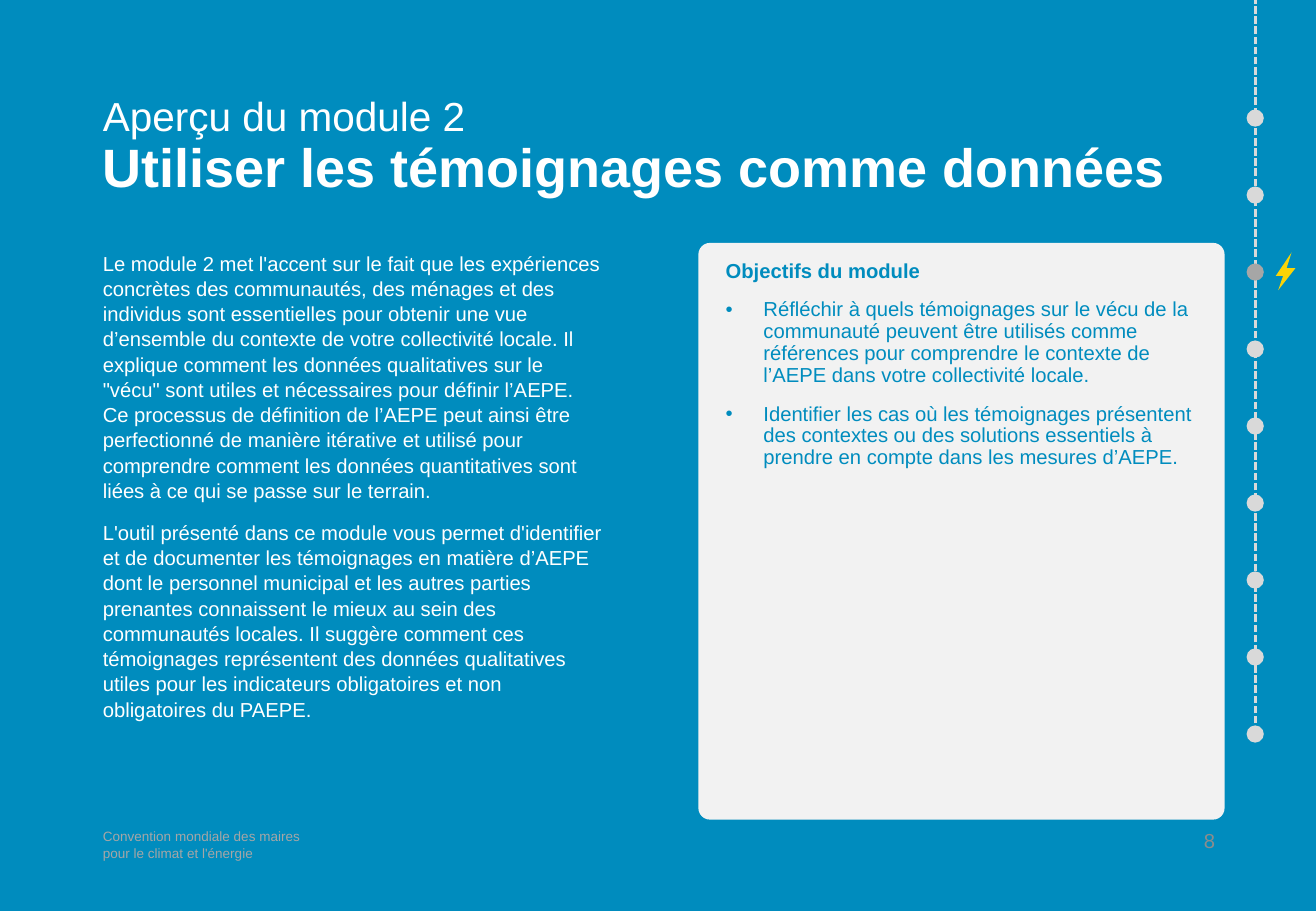
from pptx import Presentation
from pptx import util as u
from pptx.dml.color import RGBColor
from pptx.enum import dml, shapes, text
from pptx.oxml.ns import qn
from lxml import etree

BLUE, WHITE, CARD, DOT, GREY, NUMBER, BOLT = (
    "008CBE", "FFFFFF", "F2F2F2", "D9D9D9", "A6A6A6", "8C8C8C", "FAD307")

INTRO = [
    "Le module 2 met l'accent sur le fait que les expériences concrètes des communautés, des ménages "
    "et des individus sont essentielles pour obtenir une vue d’ensemble du contexte de votre "
    "collectivité locale. Il explique comment les données qualitatives sur le \"vécu\" sont utiles et "
    "nécessaires pour définir l’AEPE. Ce processus de définition de l’AEPE peut ainsi être "
    "perfectionné de manière itérative et utilisé pour comprendre comment les données quantitatives "
    "sont liées à ce qui se passe sur le terrain.",
    "L'outil présenté dans ce module vous permet d'identifier et de documenter les témoignages en "
    "matière d’AEPE dont le personnel municipal et les autres parties prenantes connaissent le mieux "
    "au sein des communautés locales. Il suggère comment ces témoignages représentent des données "
    "qualitatives utiles pour les indicateurs obligatoires et non obligatoires du PAEPE.",
]
OBJECTIVES = [
    "Réfléchir à quels témoignages sur le vécu de la communauté peuvent être utilisés comme "
    "références pour comprendre le contexte de l’AEPE dans votre collectivité locale.",
    "Identifier les cas où les témoignages présentent des contextes ou des solutions essentiels à "
    "prendre en compte dans les mesures d’AEPE.",
]


def color(value):
    return RGBColor.from_string(value)


def apply(target, values):
    for name, value in values.items():
        setattr(target, name, value)


class SlideBuilder:
    font = "Arial"

    def __init__(self, slide):
        self.slide = slide
        slide.background.fill.solid()
        slide.background.fill.fore_color.rgb = color(BLUE)

    def fill(self, shape, value):
        """Give a shape a plain fill with neither line nor shadow."""
        shape.shadow.inherit = False
        shape.fill.solid()
        shape.fill.fore_color.rgb = color(value)
        shape.line.fill.background()

    def shape(self, kind, box, value):
        shape = self.slide.shapes.add_shape(kind, *map(u.Cm, box))
        self.fill(shape, value)
        return shape

    def textbox(self, box):
        return self.slide.shapes.add_textbox(*map(u.Cm, box))

    def add_text(self, shape, paragraphs, value, frame=None, **layout):
        """Add paragraphs, each a list of (text, size, bold) lines."""
        text_frame = shape.text_frame
        apply(text_frame, {"word_wrap": True, "vertical_anchor": text.MSO_ANCHOR.TOP, **(frame or {})})
        for index, lines in enumerate(paragraphs):
            paragraph = text_frame.add_paragraph() if index else text_frame.paragraphs[0]
            apply(paragraph, {"alignment": text.PP_ALIGN.LEFT, "space_before": u.Pt(10 if index else 0),
                              **layout})
            for number, (line, size, bold) in enumerate(lines):
                if number:
                    paragraph.add_line_break()
                run = paragraph.add_run()
                run.text = line
                apply(run.font, {"name": self.font, "size": u.Pt(size), "bold": bold})
                run.font.color.rgb = color(value)

    def bullet(self, paragraph, indent):
        properties = paragraph._p.get_or_add_pPr()
        properties.set("marL", str(u.Cm(indent)))
        properties.set("indent", str(-u.Cm(indent)))
        etree.SubElement(properties, qn("a:buFont")).set("typeface", self.font)
        etree.SubElement(properties, qn("a:buChar")).set("char", "•")

    def dashed_line(self, x, top, bottom, value):
        line = self.slide.shapes.add_connector(
            shapes.MSO_CONNECTOR.STRAIGHT, *map(u.Cm, (x, bottom, x, top)))
        apply(line.line, {"width": u.Pt(1.5), "dash_style": dml.MSO_LINE.SQUARE_DOT})
        line.line.color.rgb = color(value)
        etree.SubElement(line._element.spPr, qn("a:effectLst"))

    def polygon(self, points, value):
        start, *others = [tuple(map(u.Cm, point)) for point in points]
        builder = self.slide.shapes.build_freeform(*start)
        builder.add_line_segments(others, close=True)
        self.fill(builder.convert_to_shape(), value)


def add_timeline(page):
    center, size, first, step, current = 26.24, 0.36, 2.29, 1.61, 2
    page.dashed_line(center, 0, 15.34, DOT)
    for index in range(9):
        box = (center - size / 2, first + index * step, size, size)
        page.shape(shapes.MSO_SHAPE.OVAL, box, GREY if index == current else DOT)
    page.polygon([(26.85, 5.77), (26.67, 5.77), (27, 5.28), (26.87, 5.69)], BOLT)
    page.polygon([(26.87, 5.61), (27.08, 5.61), (26.72, 6.07), (26.85, 5.69)], BOLT)


def add_objectives(page):
    card = page.shape(shapes.MSO_SHAPE.ROUNDED_RECTANGLE, (14.6, 5.08, 11, 12.06), CARD)
    card.adjustments[0] = 0.022
    insets = {"margin_left": u.Cm(0.5), "margin_right": u.Cm(0.5),
              "margin_top": u.Cm(0.3), "margin_bottom": u.Cm(0.3)}
    lines = [[("Objectifs du module", 12, True)]] + [[(item, 12, False)] for item in OBJECTIVES]
    page.add_text(card, lines, BLUE, insets, line_spacing=0.9)
    for paragraph in card.text_frame.paragraphs[1:]:
        page.bullet(paragraph, 0.79)


def main():
    presentation = Presentation()
    apply(presentation, {"slide_width": u.Cm(27.51), "slide_height": u.Cm(19.05)})
    page = SlideBuilder(presentation.slides.add_slide(presentation.slide_layouts[6]))

    page.add_text(page.textbox((1.9, 1.9, 23.7, 2.74)),
                  [[("Aperçu du module 2", 24, False),
                    ("Utiliser les témoignages comme données", 32, True)]],
                  WHITE, line_spacing=0.9)
    page.add_text(page.textbox((1.9, 5.1, 11, 12.1)),
                  [[(item, 12, False)] for item in INTRO], WHITE, line_spacing=1.04)
    add_objectives(page)
    add_timeline(page)
    page.add_text(page.textbox((1.9, 17.2, 4.65, 1.02)),
                  [[("Convention mondiale des maires", 8, False),
                    ("pour le climat et l'énergie", 8, False)]], GREY)
    page.add_text(page.textbox((24.33, 17.2, 1.32, 1.02)),
                  [[("8", 12, False)]], NUMBER, alignment=text.PP_ALIGN.RIGHT)
    presentation.save("out.pptx")


if __name__ == "__main__":
    main()
